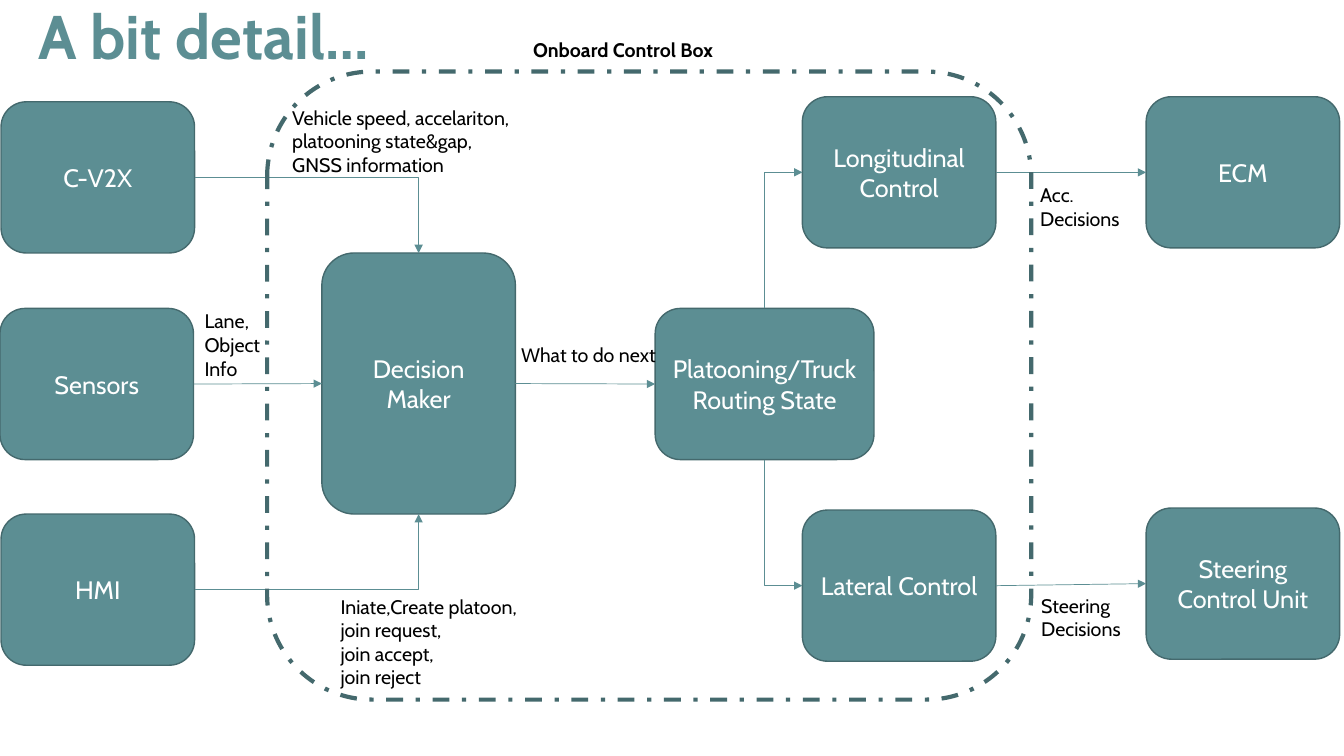
from dataclasses import dataclass

import pptx
import pptx.dml.color
import pptx.enum.dml
import pptx.enum.shapes
import pptx.enum.text
import pptx.oxml.ns
import pptx.oxml.xmlchemy
import pptx.shapes.autoshape
import pptx.shapes.connector
import pptx.slide
import pptx.text.text
import pptx.util

TEAL = pptx.dml.color.RGBColor(0x5C, 0x8E, 0x93)
DARK_TEAL = pptx.dml.color.RGBColor(0x44, 0x69, 0x6D)
WHITE = pptx.dml.color.RGBColor(0xFF, 0xFF, 0xFF)
BLACK = pptx.dml.color.RGBColor(0x00, 0x00, 0x00)
FONT = "Cabin"
SLIDE_WIDTH = pptx.util.Inches(13.33)
SLIDE_HEIGHT = pptx.util.Inches(7.5)
GRID_SIZE = 100
TOP, LEFT, BOTTOM, RIGHT = range(4)


@dataclass(frozen=True)
class Area:
    column: float
    row: float
    columns: float = 14.4
    rows: float = 20

    def lengths(self) -> tuple[int, int, int, int]:
        return (
            round(self.column * SLIDE_WIDTH / GRID_SIZE),
            round(self.row * SLIDE_HEIGHT / GRID_SIZE),
            round(self.columns * SLIDE_WIDTH / GRID_SIZE),
            round(self.rows * SLIDE_HEIGHT / GRID_SIZE),
        )


@dataclass(frozen=True)
class Label:
    text: str
    area: Area
    bold: bool = False


@dataclass(frozen=True)
class Flow:
    source: str
    source_side: int
    target: str
    target_side: int


TITLE = Label("A bit detail…", Area(2.85, 1.73, 73.35, 7.33), True)
BOUNDARY = Area(19.88, 9.47, 56.85, 83.07)

BLOCKS = [
    Label("Decision Maker", Area(23.95, 33.47, rows=34.53)),
    Label("Platooning/Truck Routing State", Area(48.75, 40.8, columns=16.28)),
    Label("Longitudinal Control", Area(59.7, 12.8)),
    Label("Lateral Control", Area(59.7, 67.47)),
    Label("ECM", Area(85.28, 12.8)),
    Label("Steering Control Unit", Area(85.28, 67.2)),
    Label("C-V2X", Area(0.08, 13.47)),
    Label("HMI", Area(0.08, 68)),
    Label("Sensors", Area(0, 40.8)),
]

STRAIGHT_FLOWS = [
    Flow("Sensors", RIGHT, "Decision Maker", LEFT),
    Flow("Decision Maker", RIGHT, "Platooning/Truck Routing State", LEFT),
    Flow("Longitudinal Control", RIGHT, "ECM", LEFT),
    Flow("Lateral Control", RIGHT, "Steering Control Unit", LEFT),
]

BENT_FLOWS = [
    Flow("C-V2X", RIGHT, "Decision Maker", TOP),
    Flow("HMI", RIGHT, "Decision Maker", BOTTOM),
    Flow("Platooning/Truck Routing State", TOP, "Longitudinal Control", LEFT),
    Flow("Platooning/Truck Routing State", BOTTOM, "Lateral Control", LEFT),
]

LABELS = [
    Label(
        "Vehicle speed, accelariton, platooning state&gap, GNSS information",
        Area(21, 13.33, 17.85, 10.8),
    ),
    Label(
        "Iniate‚Create platoon,\njoin request,\njoin accept,\njoin reject",
        Area(24.6, 78, 17.85, 13.87),
    ),
    Label("Steering Decisions", Area(76.73, 77.87, 12, 7.6)),
    Label("Acc.\nDecisions", Area(76.65, 23.6, 12, 7.6)),
    Label("What to do next", Area(38.03, 44.67, 14.18, 4.53)),
    Label("Onboard Control Box", Area(38.93, 4.4, 17.48, 4.53), True),
    Label("Lane, Object\nInfo", Area(14.48, 40.27, 8.85, 10.8)),
]


def write_text(
    text_frame: pptx.text.text.TextFrame,
    label: Label,
    size: int,
    color: pptx.dml.color.RGBColor,
    alignment: pptx.enum.text.PP_ALIGN = pptx.enum.text.PP_ALIGN.LEFT,
) -> None:
    text_frame.text = label.text
    text_frame.word_wrap = True
    for paragraph in text_frame.paragraphs:
        paragraph.alignment = alignment
        for run in paragraph.runs:
            run.font.name = FONT
            run.font.size = pptx.util.Pt(size)
            run.font.bold = label.bold
            run.font.color.rgb = color


def format_title(slide: pptx.slide.Slide) -> None:
    title = slide.shapes.title
    title.left, title.top, title.width, title.height = TITLE.area.lengths()
    text_frame = title.text_frame
    write_text(text_frame, TITLE, 44, TEAL)
    text_frame.margin_left = text_frame.margin_right = 0
    text_frame.margin_top = text_frame.margin_bottom = 0
    text_frame.vertical_anchor = pptx.enum.text.MSO_ANCHOR.MIDDLE
    text_frame.auto_size = pptx.enum.text.MSO_AUTO_SIZE.NONE
    text_frame.paragraphs[0].line_spacing = 0.85


def add_rounded(
    slide: pptx.slide.Slide, area: Area, line_width: float
) -> pptx.shapes.autoshape.Shape:
    shape = slide.shapes.add_shape(
        pptx.enum.shapes.MSO_SHAPE.ROUNDED_RECTANGLE, *area.lengths()
    )
    shape.shadow.inherit = False
    shape.line.color.rgb = DARK_TEAL
    shape.line.width = pptx.util.Pt(line_width)
    return shape


def add_block(slide: pptx.slide.Slide, block: Label) -> pptx.shapes.autoshape.Shape:
    shape = add_rounded(slide, block.area, 1)
    shape.fill.solid()
    shape.fill.fore_color.rgb = TEAL
    write_text(shape.text_frame, block, 18, WHITE, pptx.enum.text.PP_ALIGN.CENTER)
    shape.text_frame.vertical_anchor = pptx.enum.text.MSO_ANCHOR.MIDDLE
    return shape


def add_boundary(slide: pptx.slide.Slide) -> None:
    boundary = add_rounded(slide, BOUNDARY, 3)
    boundary.fill.background()
    boundary.line.dash_style = pptx.enum.dml.MSO_LINE.DASH_DOT


def side_middle(shape: pptx.shapes.autoshape.Shape, side: int) -> tuple[int, int]:
    across, down = {TOP: (1, 0), LEFT: (0, 1), BOTTOM: (1, 2), RIGHT: (2, 1)}[side]
    return shape.left + shape.width * across // 2, shape.top + shape.height * down // 2


def style_arrow(connector: pptx.shapes.connector.Connector) -> None:
    connector.line.color.rgb = TEAL
    connector.line.width = pptx.util.Pt(0.5)
    properties = connector.element.spPr
    line = properties.find(pptx.oxml.ns.qn("a:ln"))
    tail = pptx.oxml.xmlchemy.OxmlElement("a:tailEnd")
    tail.set("type", "triangle")
    line.append(tail)
    properties.append(pptx.oxml.xmlchemy.OxmlElement("a:effectLst"))


def add_straight_flow(
    slide: pptx.slide.Slide, flow: Flow, blocks: dict[str, pptx.shapes.autoshape.Shape]
) -> None:
    connector = slide.shapes.add_connector(
        pptx.enum.shapes.MSO_CONNECTOR.STRAIGHT, 0, 0, 0, 0
    )
    connector.begin_connect(blocks[flow.source], flow.source_side)
    connector.end_connect(blocks[flow.target], flow.target_side)
    style_arrow(connector)


def add_bent_flow(
    slide: pptx.slide.Slide, flow: Flow, blocks: dict[str, pptx.shapes.autoshape.Shape]
) -> None:
    begin_x, begin_y = side_middle(blocks[flow.source], flow.source_side)
    end_x, end_y = side_middle(blocks[flow.target], flow.target_side)
    starts_vertical = flow.source_side in (TOP, BOTTOM)
    if starts_vertical:
        center_x, center_y = (begin_x + end_x) // 2, (begin_y + end_y) // 2
        half_x, half_y = (end_y - begin_y) // 2, (begin_x - end_x) // 2
        begin_x, end_x = center_x - half_x, center_x + half_x
        begin_y, end_y = center_y - half_y, center_y + half_y
    connector = slide.shapes.add_connector(
        pptx.enum.shapes.MSO_CONNECTOR.ELBOW, begin_x, begin_y, end_x, end_y
    )
    properties = connector.element.spPr
    properties.find(pptx.oxml.ns.qn("a:prstGeom")).set("prst", "bentConnector2")
    if starts_vertical:
        properties.find(pptx.oxml.ns.qn("a:xfrm")).set("rot", str(90 * 60000))
    style_arrow(connector)


def add_label(slide: pptx.slide.Slide, label: Label) -> None:
    text_box = slide.shapes.add_textbox(*label.area.lengths())
    write_text(text_box.text_frame, label, 14, BLACK)
    text_box.text_frame.auto_size = pptx.enum.text.MSO_AUTO_SIZE.SHAPE_TO_FIT_TEXT


def main() -> None:
    presentation = pptx.Presentation()
    presentation.slide_width = SLIDE_WIDTH
    presentation.slide_height = SLIDE_HEIGHT
    slide = presentation.slides.add_slide(presentation.slide_layouts[5])
    format_title(slide)
    blocks = {block.text: add_block(slide, block) for block in BLOCKS}
    for flow in STRAIGHT_FLOWS:
        add_straight_flow(slide, flow, blocks)
    for flow in BENT_FLOWS:
        add_bent_flow(slide, flow, blocks)
    add_boundary(slide)
    for label in LABELS:
        add_label(slide, label)
    presentation.save("out.pptx")


if __name__ == "__main__":
    main()
